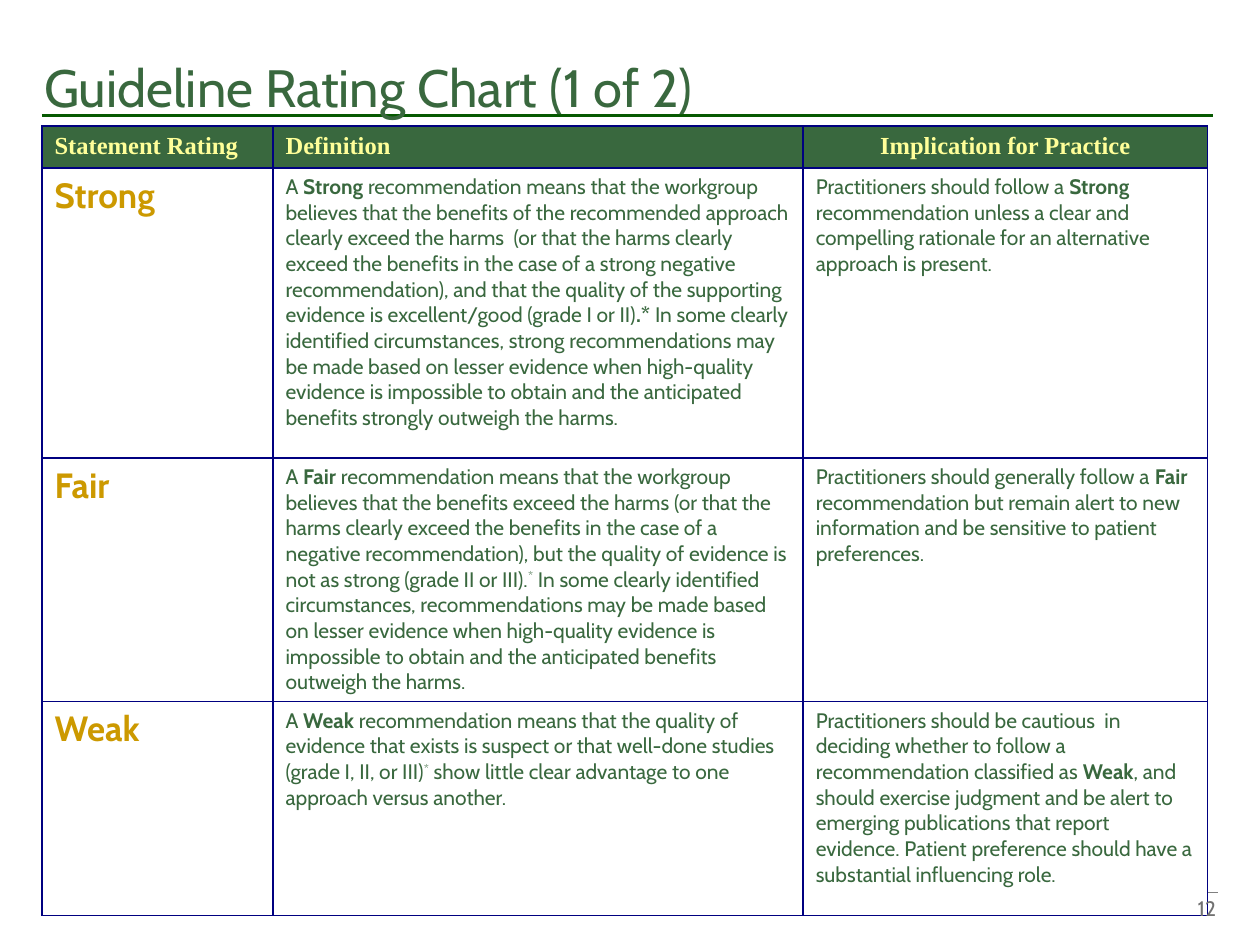
import pptx
import pptx.dml.color
import pptx.enum.shapes
import pptx.enum.text
import pptx.oxml
import pptx.oxml.ns
import pptx.util

RGBColor = pptx.dml.color.RGBColor
ALIGN = pptx.enum.text.PP_ALIGN
ANCHOR = pptx.enum.text.MSO_ANCHOR

GREEN = RGBColor(0x39, 0x68, 0x3E)
RULE_GREEN = RGBColor(0x06, 0x59, 0x01)
GOLD = RGBColor(0xCC, 0x99, 0x00)
YELLOW = RGBColor(0xFF, 0xFF, 0x99)
NAVY = RGBColor(0x00, 0x00, 0x80)
GRAY = RGBColor(0x80, 0x80, 0x80)
NUMBER_GRAY = RGBColor(0x71, 0x71, 0x71)
WHITE = RGBColor(0xFF, 0xFF, 0xFF)

EMU_PER_PX = 9525  # 96 px to the inch

TITLE = {"name": "Cabin", "size": 30, "color": GREEN}
HEADER = {"name": "Times New Roman", "size": 14, "color": YELLOW, "bold": True}
RATING = {"name": "Cabin", "size": 20, "color": GOLD, "bold": True}
BODY = {"name": "Cabin", "size": 12, "color": GREEN, "bold": False}
NUMBER = {"name": "Cabin", "size": 12, "color": NUMBER_GRAY}

# In cell text, |...| is bold and ^...^ is superscript
HEADINGS = ["Statement Rating", "Definition", "Implication for Practice"]
RATINGS = [
    ["Strong",
     "A |Strong| recommendation means that the workgroup believes that the benefits of the "
     "recommended approach clearly exceed the harms  (or that the harms clearly exceed the "
     "benefits in the case of a strong negative recommendation), and that the quality of the "
     "supporting evidence is excellent/good (grade I or II)|.*| In some clearly identified "
     "circumstances, strong recommendations may be made based on lesser evidence when "
     "high-quality evidence is impossible to obtain and the anticipated benefits strongly "
     "outweigh the harms.",
     "Practitioners should follow a |Strong |recommendation unless a clear and compelling "
     "rationale for an alternative approach is present."],
    ["Fair",
     "A| Fair |recommendation means that the workgroup believes that the benefits exceed the "
     "harms (or that the harms clearly exceed the benefits in the case of a negative "
     "recommendation), but the quality of evidence is not as strong (grade II or III).^*^ In "
     "some clearly identified circumstances, recommendations may be made based on lesser "
     "evidence when high-quality evidence is impossible to obtain and the anticipated "
     "benefits outweigh the harms.",
     "Practitioners should generally follow a |Fair| recommendation but remain alert to new "
     "information and be sensitive to patient preferences."],
    ["Weak",
     "A |Weak |recommendation means that the quality of evidence that exists is suspect or "
     "that well-done studies (grade I, II, or III)^*^ show little clear advantage to one "
     "approach versus another.",
     "Practitioners should be cautious  in deciding whether to follow a recommendation "
     "classified as |Weak|, and should exercise judgment and be alert to emerging "
     "publications that report evidence. Patient preference should have a substantial "
     "influencing role."],
]


def px(length):
    return pptx.util.Emu(length * EMU_PER_PX)


class SlideBuilder:
    def __init__(self, slide):
        self.slide = slide

    def format_font(self, font, style):
        for key, value in style.items():
            if key == "color":
                font.color.rgb = value
            else:
                setattr(font, key, pptx.util.Pt(value) if key == "size" else value)

    def fill_text(self, text_frame, text, style, align=ALIGN.LEFT):
        paragraph = text_frame.paragraphs[0]
        paragraph.alignment = align
        for bold_index, part in enumerate(text.split("|")):
            for raised_index, piece in enumerate(part.split("^")):
                if not piece:
                    continue
                run = paragraph.add_run()
                run.text = piece
                self.format_font(run.font, style)
                if bold_index % 2:
                    run.font.bold = True
                if raised_index % 2:
                    run.font._element.set("baseline", "30000")

    def rule(self, left, right, y, color, width):
        line = self.slide.shapes.add_connector(
            pptx.enum.shapes.MSO_CONNECTOR.STRAIGHT, px(left), px(y), px(right), px(y))
        line.line.color.rgb = color
        line.line.width = pptx.util.Pt(width)
        line._element.spPr.append(pptx.oxml.parse_xml(
            f'<a:effectLst {pptx.oxml.ns.nsdecls("a")}/>'))

    def title(self, text, left, top, width, height):
        shape = self.slide.shapes.title
        shape.left, shape.top, shape.width, shape.height = map(px, (left, top, width, height))
        frame = shape.text_frame
        frame.auto_size = pptx.enum.text.MSO_AUTO_SIZE.NONE
        frame.vertical_anchor = ANCHOR.MIDDLE
        self.fill_text(frame, text, TITLE)
        self.slide.shapes._spTree.append(shape._element)  # in front of the rule

    def text(self, text, left, top, width, height, style, align):
        shape = self.slide.shapes.add_textbox(px(left), px(top), px(width), px(height))
        shape.text_frame.word_wrap = True
        shape.text_frame.vertical_anchor = ANCHOR.MIDDLE
        self.fill_text(shape.text_frame, text, style, align)

    def border(self, cell):
        properties = cell._tc.get_or_add_tcPr()
        for index, side in enumerate("LRTB"):
            properties.insert(index, pptx.oxml.parse_xml(
                f'<a:ln{side} {pptx.oxml.ns.nsdecls("a")} w="12700"><a:solidFill>'
                f'<a:srgbClr val="{NAVY}"/></a:solidFill></a:ln{side}>'))

    def table(self, rows, left, top, widths, heights):
        table = self.slide.shapes.add_table(
            len(heights), len(widths), px(left), px(top),
            px(sum(widths)), px(sum(heights))).table
        table.first_row = table.horz_banding = False
        for column, width in zip(table.columns, widths):
            column.width = px(width)
        for row, height in zip(table.rows, heights):
            row.height = px(height)
        for r, row in enumerate(rows):
            for c, text in enumerate(row):
                cell = table.cell(r, c)
                cell.fill.solid()
                cell.fill.fore_color.rgb = WHITE if r else GREEN
                self.border(cell)
                style = HEADER if r == 0 else RATING if c == 0 else BODY
                align = ALIGN.CENTER if (r, c) == (0, 2) else ALIGN.LEFT
                self.fill_text(cell.text_frame, text, style, align)


def main():
    presentation = pptx.Presentation()
    presentation.slide_width, presentation.slide_height = px(960), px(720)
    builder = SlideBuilder(presentation.slides.add_slide(presentation.slide_layouts[5]))

    # Footer and title rules
    builder.rule(32, 928, 680, GRAY, 1)
    builder.rule(32, 924, 88, RULE_GREEN, 2.25)

    # Rating table
    builder.table([HEADINGS] + RATINGS, 32, 96, [176, 404, 308], [32, 221, 182, 163])

    # Title and slide number
    builder.title("Guideline Rating Chart (1 of 2)", 24, 36, 864, 60)
    builder.text("12", 712, 680, 224, 24, NUMBER, ALIGN.RIGHT)

    presentation.save("out.pptx")


if __name__ == "__main__":
    main()
